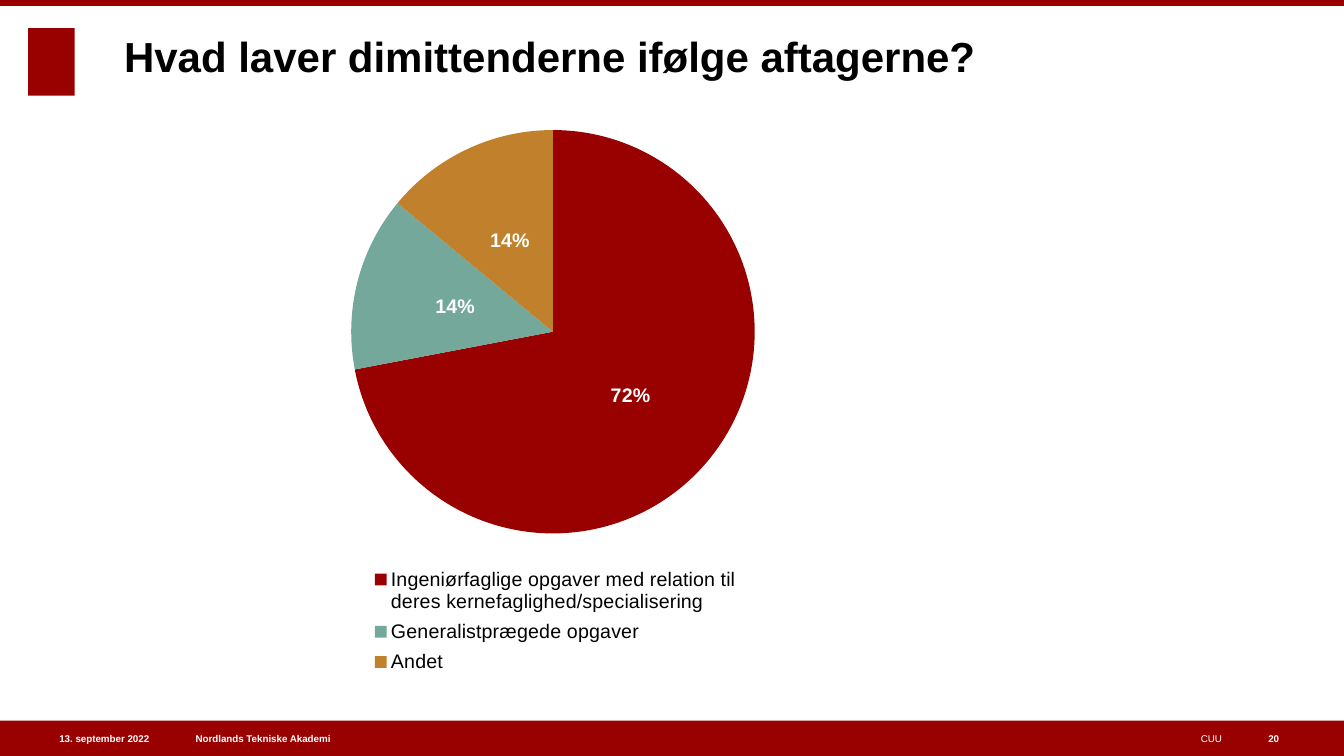
from lxml import etree
from pptx import Presentation
from pptx.chart.data import CategoryChartData
from pptx.dml.color import RGBColor
from pptx.enum.chart import XL_CHART_TYPE, XL_LABEL_POSITION, XL_LEGEND_POSITION
from pptx.enum.shapes import MSO_SHAPE as Preset
from pptx.enum.text import MSO_ANCHOR as Anchor, MSO_AUTO_SIZE as AutoSize, PP_ALIGN as Align
from pptx.oxml.ns import qn
from pptx.util import Inches, Pt

FONT = "Arial"
RED, WHITE, BLACK = "990000", "FFFFFF", "000000"
WIDTH, HEIGHT = 13.33, 7.5
FOOTER_HEIGHT = 0.35
FOOTER_TOP = HEIGHT - FOOTER_HEIGHT

TITLE = "Hvad laver dimittenderne ifølge aftagerne?"
TASKS = [
    ("Ingeniørfaglige opgaver med relation til deres kernefaglighed/specialisering", 0.72, RED),
    ("Generalistprægede opgaver", 0.14, "73A89A"),
    ("Andet", 0.14, "C1802C"),
]
# text, left, width, alignment, bold
FOOTER = [
    ("13. september 2022", 0.27, 1.21, Align.RIGHT, True),
    ("Nordlands Tekniske Akademi", 1.94, 3.72, Align.LEFT, True),
    ("CUU", 6.11, 6.01, Align.RIGHT, False),
    ("20", 12.58, 0.47, Align.LEFT, True),
]
# left, top, width, height
RED_BLOCKS = [
    (0.28, 0.28, 0.46, 0.67),
    (0, FOOTER_TOP, WIDTH, FOOTER_HEIGHT),
    (0, 0, WIDTH, 0.06),
]
PIE_LAYOUT = (0.07, 0.15, 0.87, 0.6)
LEGEND_LAYOUT = (0.11, 0.79, 0.8, 0.18)


def rgb(color):
    return RGBColor.from_string(color)


def style_font(font, size, color, bold=False):
    font.name = FONT
    font.size = Pt(size)
    font.bold = bold
    font.color.rgb = rgb(color)


def write(shape, text, size, color, bold=False, align=Align.LEFT):
    frame = shape.text_frame
    frame.text = text
    frame.word_wrap = True
    frame.auto_size = AutoSize.NONE
    frame.vertical_anchor = Anchor.MIDDLE
    frame.margin_left = frame.margin_right = frame.margin_top = frame.margin_bottom = 0
    line = frame.paragraphs[0]
    line.alignment = align
    style_font(line.runs[0].font, size, color, bold)


def set_layout(part, index, box, inner=False):
    """Place a chart part by fractions of the chart's width and height."""
    for old in part.findall(qn("c:layout")):
        part.remove(old)
    layout = etree.Element(qn("c:layout"))
    manual = etree.SubElement(layout, qn("c:manualLayout"))
    settings = [("layoutTarget", "inner")] if inner else []
    settings += [("xMode", "edge"), ("yMode", "edge"), *zip("xywh", box)]
    for tag, value in settings:
        etree.SubElement(manual, qn(f"c:{tag}")).set("val", str(value))
    part.insert(index, layout)


def add_task_pie(slide):
    data = CategoryChartData(number_format="0%")
    data.categories = [name for name, _, _ in TASKS]
    data.add_series("Series 1", [share for _, share, _ in TASKS])
    chart = slide.shapes.add_chart(
        XL_CHART_TYPE.PIE, Inches(3.04), Inches(0.29), Inches(4.84), Inches(6.67), data
    ).chart
    style_font(chart.font, 10, BLACK)
    chart.has_title = False
    chart.has_legend = True
    chart.legend.position = XL_LEGEND_POSITION.BOTTOM
    chart.legend.include_in_layout = False
    style_font(chart.legend.font, 14, BLACK)

    pie = chart.plots[0]
    pie.vary_by_categories = True
    for index, (_, _, color) in enumerate(TASKS):
        fill = pie.series[0].points[index].format.fill
        fill.solid()
        fill.fore_color.rgb = rgb(color)
    labels = pie.series[0].data_labels
    labels.show_value = True
    labels.show_percentage = False
    labels.number_format = "0%"
    labels.number_format_is_linked = False
    labels.position = XL_LABEL_POSITION.CENTER
    style_font(labels.font, 14, WHITE, bold=True)

    chart_root = chart.element.find(qn("c:chart"))
    set_layout(chart_root.find(qn("c:plotArea")), 0, PIE_LAYOUT, inner=True)
    set_layout(chart_root.find(qn("c:legend")), 1, LEGEND_LAYOUT)


def main():
    deck = Presentation()
    deck.slide_width, deck.slide_height = Inches(WIDTH), Inches(HEIGHT)
    slide = deck.slides.add_slide(deck.slide_layouts[5])

    for box in RED_BLOCKS:
        block = slide.shapes.add_shape(Preset.RECTANGLE, *map(Inches, box))
        block.shadow.inherit = False
        block.fill.solid()
        block.fill.fore_color.rgb = rgb(RED)
        block.line.fill.background()

    for text, left, width, align, bold in FOOTER:
        note = slide.shapes.add_textbox(
            Inches(left), Inches(FOOTER_TOP), Inches(width), Inches(FOOTER_HEIGHT)
        )
        write(note, text, 7, WHITE, bold, align)

    title = slide.shapes.title
    title.left, title.top = Inches(1.23), Inches(0.2)
    title.width, title.height = Inches(10.32), Inches(0.7)
    write(title, TITLE, 30, BLACK, bold=True)

    add_task_pie(slide)
    deck.save("out.pptx")


if __name__ == "__main__":
    main()
